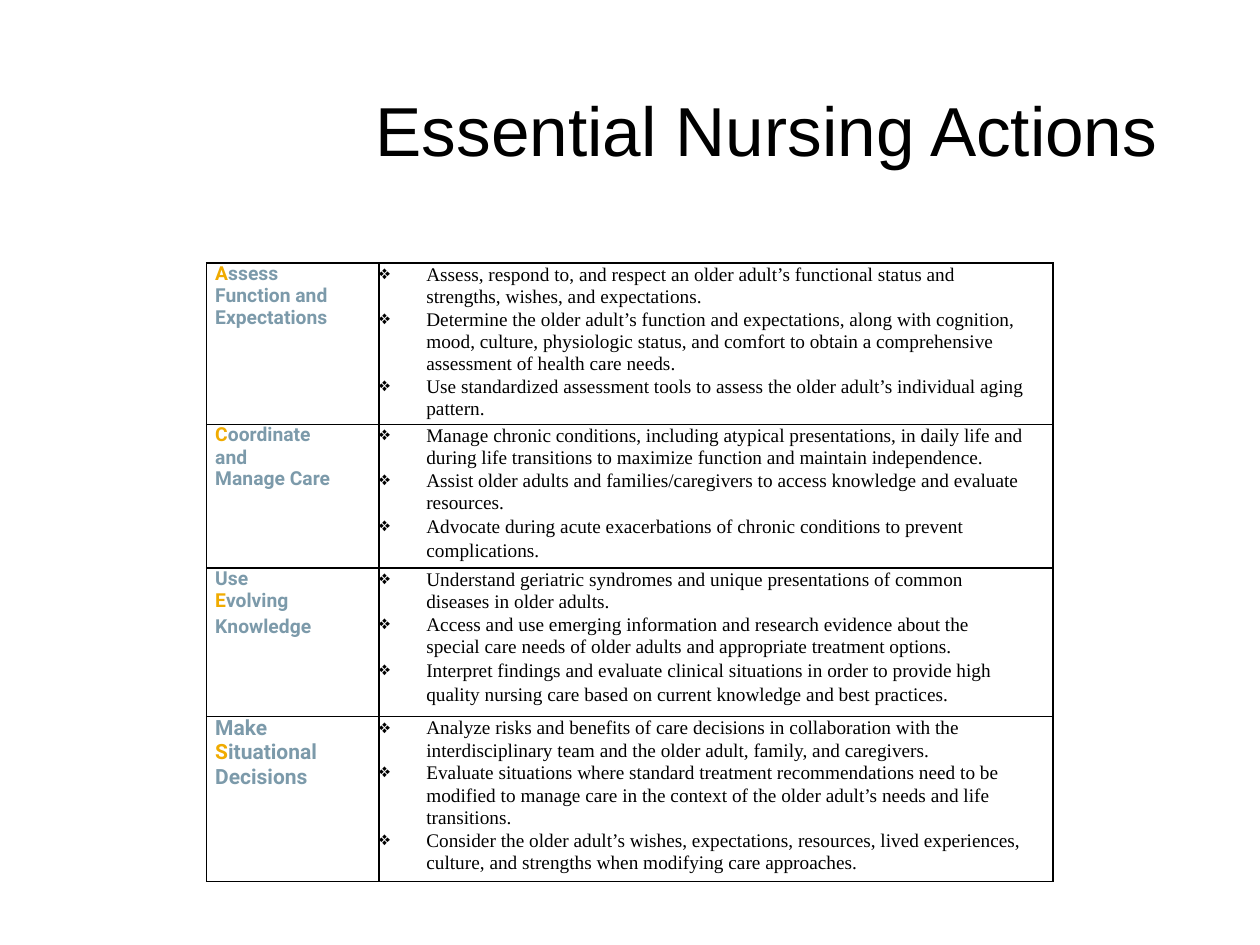
from lxml import etree
from pptx import Presentation
from pptx.dml.color import RGBColor
from pptx.enum.text import MSO_ANCHOR, PP_ALIGN
from pptx.oxml.ns import qn
from pptx.util import Pt

BLACK = RGBColor(0, 0, 0)
GOLD = RGBColor(0xF0, 0xAB, 0x00)
SLATE = RGBColor(0x7C, 0x9A, 0xAA)
MIDDLE, TOP = MSO_ANCHOR.MIDDLE, MSO_ANCHOR.TOP
CENTER = PP_ALIGN.CENTER

COLS = (98.6, 385.2)
TIGHT, LOOSE = Pt(12.8), Pt(13.7)

# Each row: height, label size, label paragraphs (line spacing, runs),
# bullets, line spacing of the last bullet
ROWS = [
    (92.2, 11,
     [(Pt(12.7), [("A", GOLD), ("ssess Function and", SLATE)]),
      (Pt(12.4), [("Expectations", SLATE)])],
     ["Assess, respond to, and respect an older adult’s functional status and "
      "strengths, wishes, and expectations.",
      "Determine the older adult’s function and expectations, along with cognition, "
      "mood, culture, physiologic status, and comfort to obtain a comprehensive "
      "assessment of health care needs.",
      "Use standardized assessment tools to assess the older adult’s individual aging "
      "pattern."], TIGHT),
    (82.1, 11,
     [(Pt(12.7), [("C", GOLD), ("oordinate and", SLATE)]),
      (Pt(12.4), [("Manage Care", SLATE)])],
     ["Manage chronic conditions, including atypical presentations, in daily life and "
      "during life transitions to maximize function and maintain independence.",
      "Assist older adults and families/caregivers to access knowledge and evaluate "
      "resources.",
      "Advocate during acute exacerbations of chronic conditions to prevent "
      "complications."], LOOSE),
    (85, 11,
     [(Pt(12.6), [("Use", SLATE)]),
      (Pt(12.6), [("E", GOLD), ("volving", SLATE)]),
      (1.15, [("Knowledge", SLATE)])],
     ["Understand geriatric syndromes and unique presentations of common "
      "diseases in older adults.",
      "Access and use emerging information and research evidence about the "
      "special care needs of older adults and appropriate treatment options.",
      "Interpret findings and evaluate clinical situations in order to provide high "
      "quality nursing care based on current knowledge and best practices."], LOOSE),
    (94.3, 12,
     [(Pt(13.8), [("Make ", SLATE), ("S", GOLD), ("ituational Decisions", SLATE)])],
     ["Analyze risks and benefits of care decisions in collaboration with the "
      "interdisciplinary team and the older adult, family, and caregivers.",
      "Evaluate situations where standard treatment recommendations need to be "
      "modified to manage care in the context of the older adult’s needs and life "
      "transitions.",
      "Consider the older adult’s wishes, expectations, resources, lived experiences, "
      "culture, and strengths when modifying care approaches."], TIGHT),
]


def add_run(para, text, font, size, color, bold=False):
    run = para.add_run()
    run.text = text
    run.font.name = font
    run.font.size = Pt(size)
    run.font.bold = bold
    run.font.color.rgb = color


def indent(para, left, first=0):
    props = para._p.get_or_add_pPr()
    props.set("marL", str(Pt(left)))
    props.set("indent", str(Pt(first)))
    return props


def next_para(frame, index):
    return frame.add_paragraph() if index else frame.paragraphs[0]


def style_cell(cell, right):
    cell.margin_left = cell.margin_top = cell.margin_bottom = 0
    cell.margin_right = Pt(right)
    cell.vertical_anchor = TOP
    props = cell._tc.get_or_add_tcPr()
    for side in ("a:lnL", "a:lnR", "a:lnT", "a:lnB"):
        line = etree.SubElement(props, qn(side), w=str(Pt(1)))
        fill = etree.SubElement(line, qn("a:solidFill"))
        etree.SubElement(fill, qn("a:srgbClr"), val=str(BLACK))
    cell.fill.background()


def fill_label(cell, paras, size):
    style_cell(cell, 24)
    for i, (space, runs) in enumerate(paras):
        para = next_para(cell.text_frame, i)
        indent(para, 5)
        para.line_spacing = space
        for text, color in runs:
            add_run(para, text, "Roboto", size, color, True)


def fill_list(cell, items, last):
    style_cell(cell, 16.6)
    for i, text in enumerate(items):
        para = next_para(cell.text_frame, i)
        props = indent(para, 27, -27)
        etree.SubElement(props, qn("a:buChar"), char="❖")
        para.line_spacing = last if i == len(items) - 1 else TIGHT
        add_run(para, text, "Times New Roman", 11, BLACK)


def add_grid(slide):
    height = sum(row[0] for row in ROWS)
    grid = slide.shapes.add_table(len(ROWS), len(COLS), Pt(118), Pt(150.3),
                                  Pt(sum(COLS)), Pt(height)).table
    grid.first_row = grid.horz_banding = False
    for col, width in zip(grid.columns, COLS):
        col.width = Pt(width)
    for i, (tall, size, label, items, last) in enumerate(ROWS):
        grid.rows[i].height = Pt(tall)
        fill_label(grid.cell(i, 0), label, size)
        fill_list(grid.cell(i, 1), items, last)


def add_title(slide, text):
    box = slide.shapes.add_textbox(Pt(192.2), Pt(21.6), Pt(491.8), Pt(104.4))
    frame = box.text_frame
    frame.word_wrap = True
    frame.vertical_anchor = MIDDLE
    para = frame.paragraphs[0]
    para.alignment = CENTER
    add_run(para, text, "Arial", 39.6, BLACK)


def main():
    deck = Presentation()
    deck.slide_width, deck.slide_height = Pt(720), Pt(540)
    slide = deck.slides.add_slide(deck.slide_layouts[6])
    # Table of actions, then the heading
    add_grid(slide)
    add_title(slide, "Essential Nursing Actions")
    deck.save("out.pptx")


if __name__ == "__main__":
    main()
